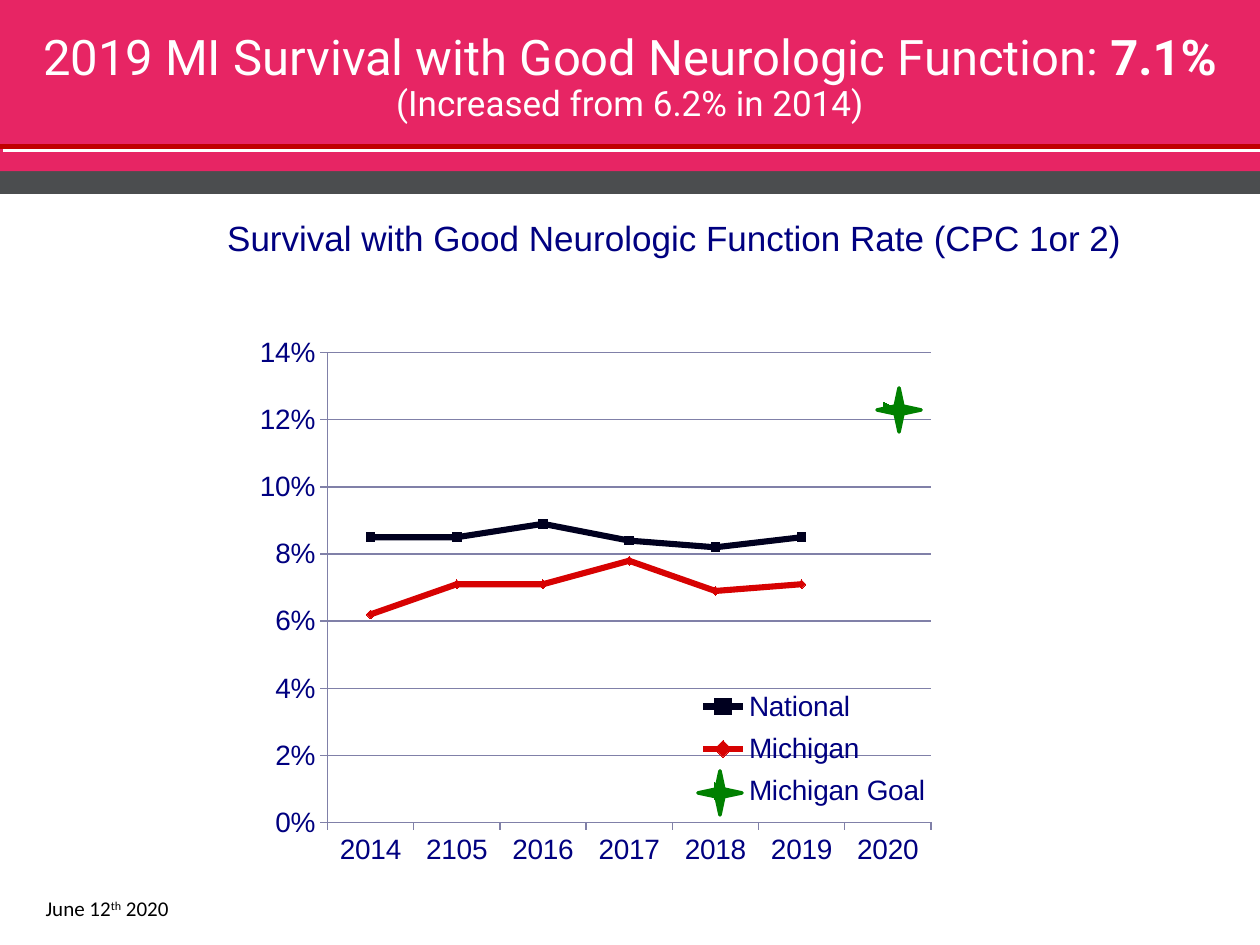
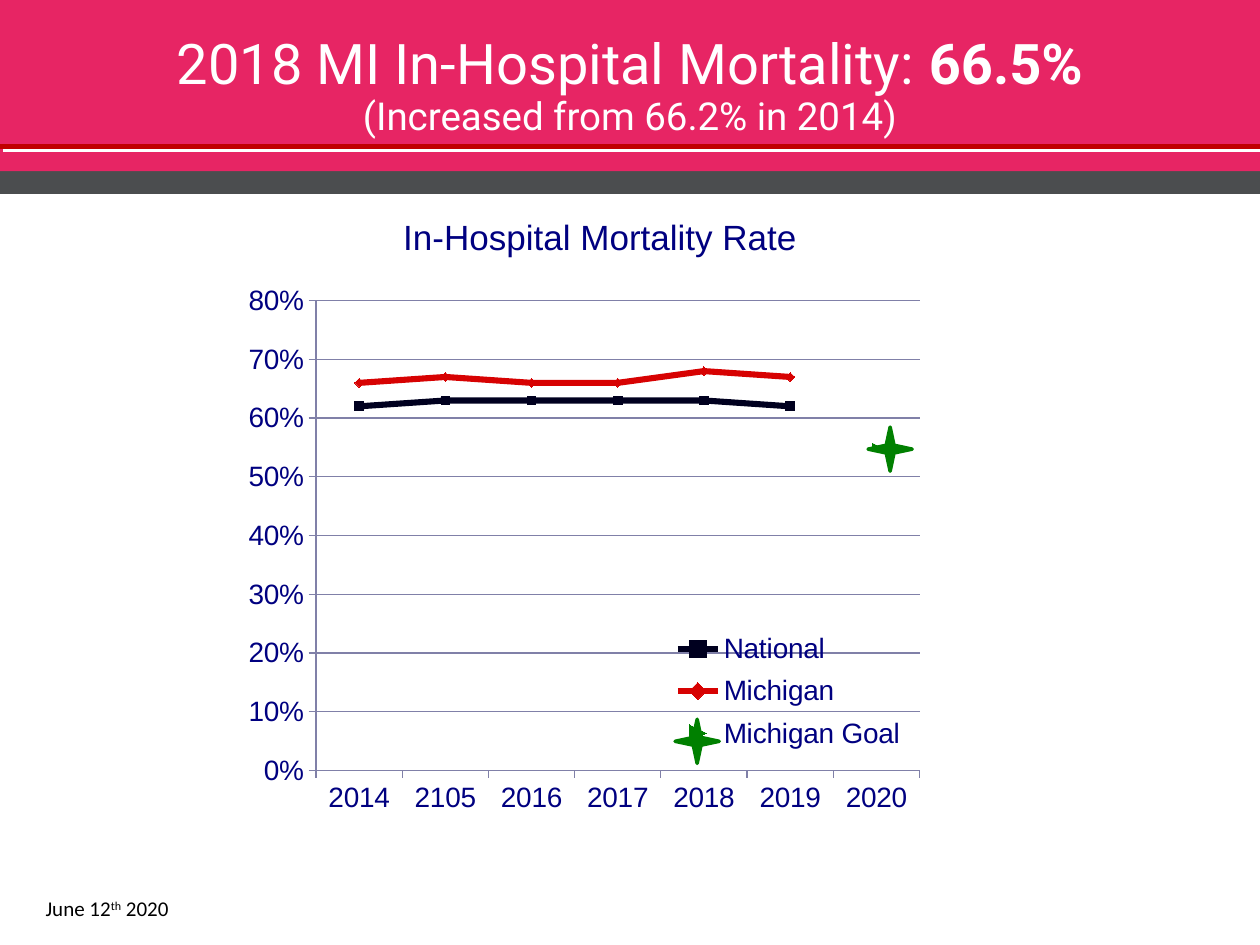
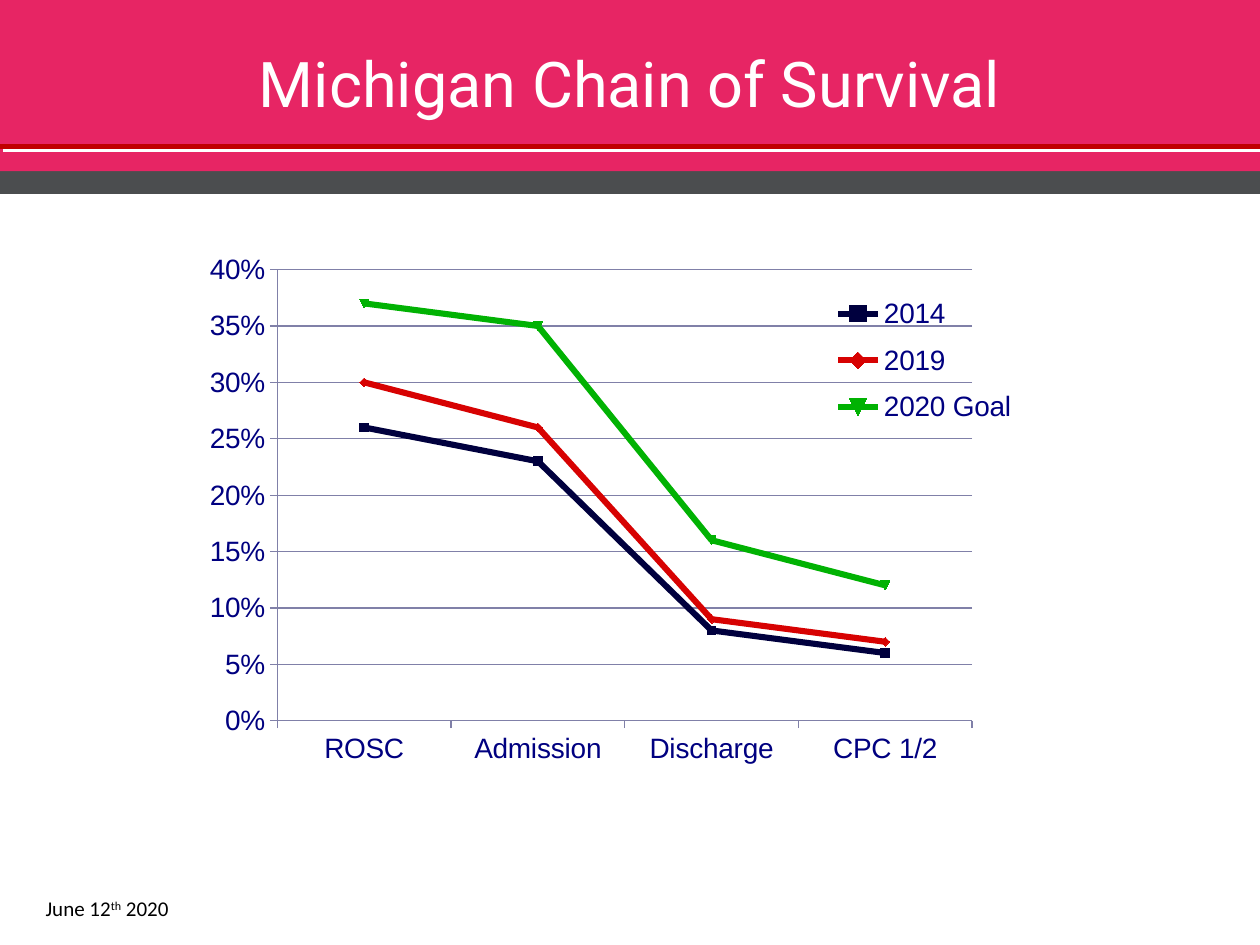
from lxml.etree import SubElement
from pptx import Presentation
from pptx.chart.data import CategoryChartData
from pptx.dml.color import RGBColor
from pptx.enum.chart import XL_CHART_TYPE, XL_LEGEND_POSITION, XL_MARKER_STYLE, XL_TICK_MARK
from pptx.enum.shapes import MSO_CONNECTOR, MSO_SHAPE
from pptx.enum.text import MSO_ANCHOR, PP_ALIGN
from pptx.oxml import parse_xml
from pptx.oxml.ns import nsdecls, qn
from pptx.util import Cm, Pt

WHITE = RGBColor(0xFF, 0xFF, 0xFF)
BLACK = RGBColor(0x00, 0x00, 0x00)
PINK = RGBColor(0xE7, 0x25, 0x64)
SLATE = RGBColor(0x4B, 0x4D, 0x4F)
RULE_RED = RGBColor(0xC0, 0x00, 0x00)
NAVY = RGBColor(0x00, 0x00, 0x80)
GRID = RGBColor(0x80, 0x80, 0xA8)
INK = RGBColor(0x00, 0x00, 0x1F)
DARK_BLUE = RGBColor(0x00, 0x00, 0x3E)
RED = RGBColor(0xD7, 0x02, 0x02)
GOAL_GREEN = RGBColor(0x00, 0x80, 0x00)
LINE_GREEN = RGBColor(0x01, 0xB2, 0x03)

WIDTH, HEIGHT = 25.4, 19.05
TITLE_BOX = (1.75, 0.56, 21.9, 2.41)
YEARS = ["2014", "2105", "2016", "2017", "2018", "2019", "2020"]
RATE_PLOT = (0.1, 0.061, 0.874, 0.847)
STAR_SIZE = 0.89


def apply(target, formats):
    for name, value in formats.items():
        setattr(target, name, value)


def set_font(font, size, color, name, bold=False):
    apply(font, {"size": Pt(size), "name": name, "bold": bold})
    font.color.rgb = color


def add_run(p, text, size, color, name, bold=False):
    r = p.add_run()
    r.text = text
    set_font(r.font, size, color, name, bold)
    return r


def add_text(s, box, **formats):
    tf = s.shapes.add_textbox(*map(Cm, box)).text_frame
    margins = dict.fromkeys(
        ("margin_left", "margin_top", "margin_right", "margin_bottom"), Cm(0.13))
    apply(tf, {"word_wrap": True, **margins, **formats})
    return tf.paragraphs[0]


def add_shape(s, kind, box, fill, line=None):
    sp = s.shapes.add_shape(kind, *map(Cm, box))
    sp.shadow.inherit = False
    sp.fill.solid()
    sp.fill.fore_color.rgb = fill
    if line is None:
        sp.line.fill.background()
    else:
        sp.line.color.rgb = line
        sp.line.width = Pt(2)


def add_bands(s):
    for height, color in ((3.91, SLATE), (3.45, PINK)):
        add_shape(s, MSO_SHAPE.RECTANGLE, (0, 0, WIDTH, height), color)


def add_rule(s):
    line = s.shapes.add_connector(
        MSO_CONNECTOR.STRAIGHT, Cm(0), Cm(2.95), Cm(WIDTH), Cm(2.95))
    line.line.color.rgb = RULE_RED
    line.line.width = Pt(3)
    line._element.spPr.append(parse_xml(
        f'<a:effectLst {nsdecls("a")}><a:outerShdw dist="35560" dir="2700000" '
        'algn="ctr" rotWithShape="0"><a:srgbClr val="FFFFFF"/>'
        '</a:outerShdw></a:effectLst>'))


def add_title(s, box, size, text, figure="", note="", note_size=20):
    p = add_text(s, box, vertical_anchor=MSO_ANCHOR.MIDDLE)
    apply(p, {"alignment": PP_ALIGN.CENTER, "line_spacing": 0.9})
    add_run(p, text, size, WHITE, "Roboto")
    if figure:
        add_run(p, figure, size, WHITE, "Roboto", True)
        p.add_line_break()
        add_run(p, note, note_size, WHITE, "Roboto")


def add_date(s):
    p = add_text(s, (0.79, 17.93, 5.72, 0.76), vertical_anchor=MSO_ANCHOR.MIDDLE)
    for text, baseline in (("June 12", 0), ("th", 30000), (" 2020", 0)):
        r = add_run(p, text, 12, BLACK, "Calibri")
        if baseline:
            r._r.get_or_add_rPr().set("baseline", str(baseline))


def add_caption(s, box, text):
    add_run(add_text(s, box, word_wrap=False), text, 20, NAVY, "Arial")


def add_stars(s, *corners):
    for left, top in corners:
        add_shape(s, MSO_SHAPE.STAR_4_POINT, (left, top, STAR_SIZE, STAR_SIZE),
                  GOAL_GREEN, GOAL_GREEN)


def set_layout(parent, index, place, inner=False):
    for old in parent.findall(qn("c:layout")):
        parent.remove(old)
    layout = parse_xml(f'<c:layout {nsdecls("c")}><c:manualLayout/></c:layout>')
    values = {"layoutTarget": "inner"} if inner else {}
    values.update(xMode="edge", yMode="edge", **dict(zip("xywh", place)))
    for name, value in values.items():
        SubElement(layout[0], qn(f"c:{name}")).set("val", str(value))
    parent.insert(index, layout)


def style_axis(axis):
    apply(axis, {"major_tick_mark": XL_TICK_MARK.OUTSIDE,
                 "minor_tick_mark": XL_TICK_MARK.NONE})
    axis.format.line.color.rgb = GRID
    set_font(axis.tick_labels.font, 16, NAVY, "Arial")


def style_series(series, color, goal):
    series.smooth = False
    marker = series.marker
    apply(marker, {"size": 5, "style": XL_MARKER_STYLE.DOT if goal
                   else XL_MARKER_STYLE.AUTOMATIC})
    marker.format.fill.solid()
    marker.format.fill.fore_color.rgb = color
    marker.format.line.color.rgb = color
    if goal:
        series.format.line.fill.background()
    else:
        series.format.line.color.rgb = color
        series.format.line.width = Pt(3.5)


def add_line_chart(s, box, categories, rows, top, step, plot, legend):
    data = CategoryChartData(number_format="0%")
    data.categories = categories
    for name, values, _ in rows:
        data.add_series(name, values)
    chart = s.shapes.add_chart(
        XL_CHART_TYPE.LINE_MARKERS, *map(Cm, box), data).chart
    apply(chart, {"has_title": False, "has_legend": True})
    set_font(chart.font, 10, NAVY, "Arial")
    chart.plots[0].vary_by_categories = False
    apply(chart.legend, {"position": XL_LEGEND_POSITION.RIGHT,
                         "include_in_layout": False})
    set_font(chart.legend.font, 16, NAVY, "Arial")
    style_axis(chart.category_axis)
    axis = chart.value_axis
    style_axis(axis)
    apply(axis, {"minimum_scale": 0, "maximum_scale": top, "major_unit": step,
                 "has_major_gridlines": True})
    axis.major_gridlines.format.line.color.rgb = GRID
    apply(axis.tick_labels, {"number_format": "0%", "number_format_is_linked": False})
    for series, (_, values, color) in zip(chart.plots[0].series, rows):
        style_series(series, color, values[0] is None)
    set_layout(chart._chartSpace.chart.plotArea, 0, plot, True)
    set_layout(chart.legend._element, 1, legend)


def add_rate_chart(s, corner, national, michigan, goal, top, step, legend):
    rows = [("National", national + [None], INK),
            ("Michigan", michigan + [None], RED),
            ("Michigan Goal", [None] * 6 + [goal], GOAL_GREEN)]
    add_line_chart(s, (*corner, 13.92, 11.18), YEARS, rows, top, step,
                   RATE_PLOT, legend)


def add_slide(prs):
    s = prs.slides.add_slide(prs.slide_layouts[6])
    add_bands(s)
    add_rule(s)
    add_date(s)
    return s


def main():
    prs = Presentation()
    apply(prs, {"slide_width": Cm(WIDTH), "slide_height": Cm(HEIGHT)})

    s = add_slide(prs)
    add_title(s, (0, 0, WIDTH, 3.18), 28,
              "2019 MI Survival with Good Neurologic Function: ", "7.1%",
              "(Increased from 6.2% in 2014)")
    add_rate_chart(s, (5.21, 6.43),
                   [0.085, 0.085, 0.089, 0.084, 0.082, 0.085],
                   [0.062, 0.071, 0.071, 0.078, 0.069, 0.071],
                   0.124, 0.14, 0.02, (0.64, 0.65, 0.33, 0.25))
    add_stars(s, (17.68, 7.82), (14.07, 15.54))
    add_caption(s, (4.45, 4.24, 18.44, 1.12),
                "Survival with Good Neurologic Function Rate (CPC 1or 2)")

    s = add_slide(prs)
    add_title(s, TITLE_BOX, 32, "2018 MI In-Hospital Mortality: ", "66.5%",
              "(Increased from 66.2% in 2014)", 22)
    add_rate_chart(s, (4.98, 5.38),
                   [0.62, 0.63, 0.63, 0.63, 0.63, 0.62],
                   [0.66, 0.67, 0.66, 0.66, 0.68, 0.67],
                   0.55, 0.8, 0.1, (0.62, 0.64, 0.33, 0.25))
    add_stars(s, (17.5, 8.61), (13.61, 14.5))
    add_caption(s, (8, 4.22, 8.26, 1.12), "In-Hospital Mortality Rate")

    s = add_slide(prs)
    add_title(s, TITLE_BOX, 36, "Michigan Chain of Survival")
    add_line_chart(s, (3.66, 4.78, 17.73, 11.3),
                   ["ROSC", "Admission", "Discharge", "CPC 1/2"],
                   [("2014", [0.26, 0.23, 0.08, 0.06], DARK_BLUE),
                    ("2019", [0.3, 0.26, 0.09, 0.07], RED),
                    ("2020 Goal", [0.37, 0.35, 0.16, 0.12], LINE_GREEN)],
                   0.4, 0.05, (0.109, 0.058, 0.79, 0.805), (0.74, 0.08, 0.21, 0.28))

    prs.save("out.pptx")


if __name__ == "__main__":
    main()
